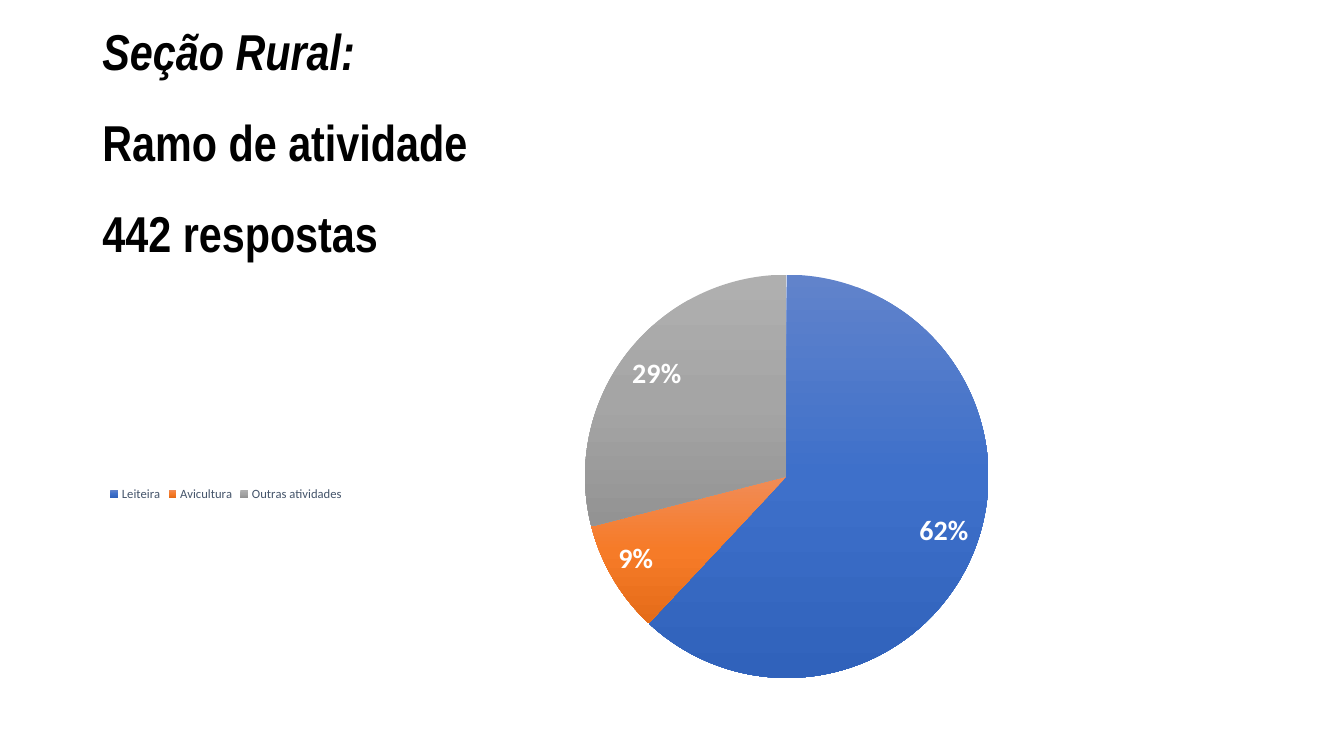
from copy import deepcopy
from typing import NamedTuple

from lxml.etree import SubElement
from pptx import Presentation
from pptx.chart.data import CategoryChartData
from pptx.dml.color import RGBColor
from pptx.enum.chart import XL_CHART_TYPE, XL_LABEL_POSITION, XL_LEGEND_POSITION
from pptx.enum.text import MSO_ANCHOR
from pptx.oxml.ns import qn
from pptx.util import Inches, Pt

WIDTH, HEIGHT = Inches(13.33), Inches(7.5)
COLS, ROWS = 160, 90


class Area(NamedTuple):
    col: float
    row: float
    cols: float
    rows: float


class Slice(NamedTuple):
    name: str
    share: int
    stops: tuple[str, str, str]


TITLE = Area(11, 6.8, 138, 16.4)
CHART = Area(11, 24, 138, 59.2)
LINES = "Seção Rural:", "Ramo de atividade", "442 respostas"
SLICES = [
    Slice("Leiteira", 62, ("6183CB", "3E70CA", "3062BB")),
    Slice("Avicultura", 9, ("F18C57", "F67B28", "E56C19")),
    Slice("Outras atividades", 29, ("AFAFAF", "A5A5A5", "939393")),
]


def color(code: str) -> RGBColor:
    return RGBColor.from_string(code)


def place(area: Area) -> tuple[int, int, int, int]:
    unit, step = WIDTH / COLS, HEIGHT / ROWS
    return (round(area.col * unit), round(area.row * step),
            round(area.cols * unit), round(area.rows * step))


def style(font, name: str, size: int, code: str, bold: bool = False) -> None:
    font.name, font.size, font.bold = name, Pt(size), bold
    font.color.rgb = color(code)


def add_title(slide) -> None:
    frame = slide.shapes.add_textbox(*place(TITLE)).text_frame
    frame.word_wrap = True
    frame.vertical_anchor = MSO_ANCHOR.MIDDLE
    para = frame.paragraphs[0]
    para.text = "\v".join(LINES)
    para.line_spacing = 1.5
    for run in para.runs:
        style(run.font, "Arial Narrow", 36, "000000", True)
    para.runs[0].font.italic = True


def set_layout(parent, index: int, percents: dict[str, float], inner: bool = False) -> None:
    for old in parent.findall(qn("c:layout")):
        parent.remove(old)
    layout = SubElement(parent, qn("c:layout"))
    parent.insert(index, layout)
    manual = SubElement(layout, qn("c:manualLayout"))
    if inner:
        SubElement(manual, qn("c:layoutTarget")).set("val", "inner")
    for mode in ("xMode", "yMode"):
        SubElement(manual, qn(f"c:{mode}")).set("val", "edge")
    for key, percent in percents.items():
        SubElement(manual, qn(f"c:{key}")).set("val", str(round(percent / 100, 3)))


def shade(point, root, stops: tuple[str, str, str]) -> None:
    fill = point.format.fill
    fill.gradient()
    fill.gradient_angle = 270
    group = list(root.iter(qn("a:gsLst")))[-1]
    group.append(deepcopy(group[-1]))
    for index, (stop, code) in enumerate(zip(fill.gradient_stops, stops)):
        stop.position = index / 2
        stop.color.rgb = color(code)


def add_pie(slide) -> None:
    data = CategoryChartData()
    data.categories = [item.name for item in SLICES]
    data.add_series("Series 1", [item.share for item in SLICES])
    chart = slide.shapes.add_chart(XL_CHART_TYPE.PIE, *place(CHART), data).chart
    chart.has_title = False
    style(chart.font, "Calibri", 10, "000000")
    plot = chart.plots[0]
    plot.vary_by_categories = True
    root = chart.element
    for point, item in enumerate(SLICES):
        shade(plot.series[0].points[point], root, item.stops)

    plot.has_data_labels = True
    labels = plot.data_labels
    labels.show_value = False
    labels.show_percentage = True
    labels.number_format = "0%"
    labels.number_format_is_linked = False
    labels.position = XL_LABEL_POSITION.INSIDE_END
    style(labels.font, "Calibri", 20, "FFFFFF", True)

    chart.has_legend = True
    legend = chart.legend
    legend.position = XL_LEGEND_POSITION.BOTTOM
    legend.include_in_layout = False
    style(legend.font, "Calibri", 9, "44546A")
    set_layout(root.find(f".//{qn('c:plotArea')}"), 0,
               {"x": 42.5, "y": 13.4, "w": 34.8, "h": 83.7}, True)
    set_layout(root.find(f".//{qn('c:legend')}"), 1, {"x": 1.2, "y": 56.5})


def main() -> None:
    deck = Presentation()
    deck.slide_width, deck.slide_height = WIDTH, HEIGHT
    slide = deck.slides.add_slide(deck.slide_layouts[6])
    add_title(slide)
    add_pie(slide)
    deck.save("out.pptx")


if __name__ == "__main__":
    main()
